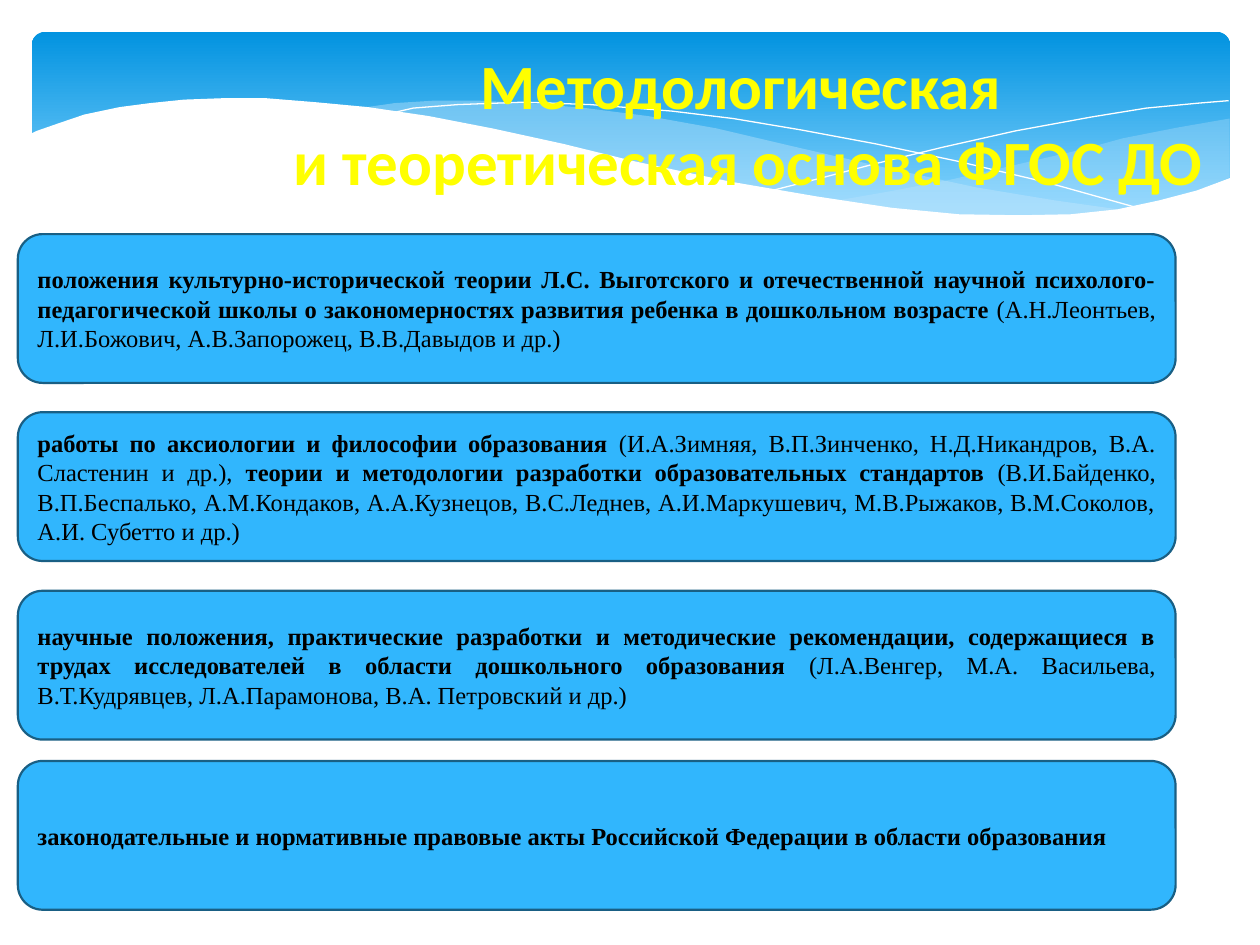
import dataclasses

import lxml.etree
import pptx
import pptx.dml.color
import pptx.enum.shapes
import pptx.enum.text
import pptx.oxml.ns
import pptx.util

Cm, Pt = pptx.util.Cm, pptx.util.Pt
RGB = pptx.dml.color.RGBColor.from_string
ROUNDED = pptx.enum.shapes.MSO_SHAPE.ROUNDED_RECTANGLE
ALIGN = pptx.enum.text.PP_ALIGN
ANCHOR = pptx.enum.text.MSO_ANCHOR


@dataclasses.dataclass(frozen=True)
class Theme:
    sky_top: str = "0293E0"
    sky_bottom: str = "83D3FE"
    swell: str = "C6E7FC"
    white: str = "FFFFFF"
    title: str = "FFFF00"
    box: str = "31B6FD"
    box_line: str = "195F84"
    text: str = "000000"
    title_font: str = "Calibri"
    text_font: str = "Times New Roman"
    title_size: int = 36
    text_size: int = 14


theme = Theme()

LEFT_SWELL = [
    (22.68, 4.24), (21.26, 4.04), (19.69, 3.78), (17.93, 3.4), (15.98, 2.95),
    (14.45, 2.59), (13.06, 2.34), (11.81, 2.18), (10.67, 2.08), (9.65, 2.03),
    (8.74, 2.03), (7.95, 2.08), (7.26, 2.18), (8.69, 2.39), (10.26, 2.69),
    (11.4, 2.95), (13.46, 3.43), (15.27, 3.81), (16.89, 4.09), (18.34, 4.27),
    (19.63, 4.37), (20.78, 4.39), (21.77, 4.34)]
RIGHT_SWELL = [
    (24.79, 2.39), (23.75, 2.57), (22.63, 2.79), (21.87, 3), (20.45, 3.33),
    (19.13, 3.63), (17.93, 3.86), (16.79, 4.06), (17.91, 4.19), (18.92, 4.29),
    (19.84, 4.37), (20.93, 4.37), (21.92, 4.32), (22.78, 4.19), (23.57, 4.01),
    (24.1, 3.86), (24.79, 3.58)]
FALLING_LINE = [
    (7.85, 2.29), (8.33, 2.18), (9.22, 2.11), (10.57, 2.06), (11.91, 2.11),
    (13.54, 2.24), (14.78, 2.39), (16.15, 2.62), (17.65, 2.9), (19.3, 3.25),
    (21.11, 3.68), (23.04, 4.22)]
RISING_LINE = [
    (15.57, 3.84), (16.59, 3.58), (17.65, 3.3), (19, 2.97), (20.47, 2.64),
    (22, 2.36), (23.11, 2.18), (24.16, 2.08), (24.77, 2.03)]
WHITE_WAVE = [
    (24.82, 3.58), (24.13, 3.84), (23.37, 4.04), (22.53, 4.22), (21.59, 4.32),
    (20.55, 4.34), (19.33, 4.32), (17.98, 4.19), (16.46, 3.96), (14.71, 3.66),
    (12.78, 3.25), (11.35, 2.9), (9.93, 2.59), (8.64, 2.34), (7.42, 2.16),
    (6.35, 2.06), (5.36, 1.98), (4.5, 1.98), (3.71, 2.01), (3.02, 2.08),
    (2.41, 2.16), (1.7, 2.31), (1.17, 2.49), (0.74, 2.64), (0.58, 2.72),
    (0.58, 5.69), (24.82, 5.69)]

# Top of each box with its text parts, which alternate bold and regular
BOXES = [
    (4.72, ["положения культурно-исторической теории Л.С. Выготского и отечественной научной "
            "психолого-педагогической школы о закономерностях развития ребенка в дошкольном возрасте ",
            "(А.Н.Леонтьев, Л.И.Божович, А.В.Запорожец, В.В.Давыдов и др.)"]),
    (8.31, ["работы по аксиологии и философии образования ",
            "(И.А.Зимняя, В.П.Зинченко, Н.Д.Никандров, В.А. Сластенин и др.),",
            " теории и методологии разработки образовательных стандартов ",
            "(В.И.Байденко, В.П.Беспалько, А.М.Кондаков, А.А.Кузнецов, B.C.Леднев, "
            "А.И.Маркушевич, М.В.Рыжаков, В.М.Соколов, А.И. Субетто и др.)"]),
    (11.91, ["научные положения, практические разработки и методические рекомендации, содержащиеся "
             "в трудах исследователей в области дошкольного образования ",
             "(Л.А.Венгер, М.А. Васильева, В.Т.Кудрявцев, Л.А.Парамонова, В.А. Петровский и др.)"]),
    (15.34, ["законодательные и нормативные правовые акты Российской Федерации в области образования"]),
]


def add_outline(s, points, closed):
    (x, y), *rest = [(Cm(x), Cm(y)) for x, y in points]
    builder = s.shapes.build_freeform(x, y)
    builder.add_line_segments(rest, close=closed)
    sp = builder.convert_to_shape()
    sp.shadow.inherit = False
    return sp


def set_font(font, name, size, color):
    font.name, font.size = name, Pt(size)
    font.color.rgb = RGB(color)


prs = pptx.Presentation()
prs.slide_width, prs.slide_height = Cm(25.4), Cm(19.05)
s = prs.slides.add_slide(prs.slide_layouts[5])

# Header band with waves
sp = s.shapes.add_shape(ROUNDED, Cm(0.64), Cm(0.64), Cm(24.16), Cm(3.96))
sp.adjustments[0] = 0.07
sp.shadow.inherit = False
sp.line.fill.background()
sp.fill.gradient()
sp.fill.gradient_angle = 270
for stop, position, color in zip(sp.fill.gradient_stops, (0, 0.9),
                                 (theme.sky_top, theme.sky_bottom)):
    stop.position = position
    stop.color.rgb = RGB(color)

waves = [(RIGHT_SWELL, theme.swell, 29), (LEFT_SWELL, theme.swell, 40),
         (FALLING_LINE, None, 100), (RISING_LINE, None, 100),
         (WHITE_WAVE, theme.white, 100)]
for points, color, opacity in waves:
    sp = add_outline(s, points, closed=color is not None)
    if color is None:
        sp.fill.background()
        sp.line.color.rgb = RGB(theme.white)
        sp.line.width = Pt(0)
        continue
    sp.line.fill.background()
    sp.fill.solid()
    sp.fill.fore_color.rgb = RGB(color)
    if opacity < 100:
        srgb = sp.element.spPr.find(".//" + pptx.oxml.ns.qn("a:srgbClr"))
        alpha = lxml.etree.SubElement(srgb, pptx.oxml.ns.qn("a:alpha"))
        alpha.set("val", str(opacity * 1000))

# Title, brought in front of the waves
title = s.shapes.title
title.element.getparent().append(title.element)
title.left, title.top, title.width, title.height = Cm(5.28), Cm(0.81), Cm(19.61), Cm(3.33)
tf = title.text_frame
tf.text = "Методологическая \nи теоретическая основа ФГОС ДО"
tf.word_wrap = False
tf.auto_size = pptx.enum.text.MSO_AUTO_SIZE.SHAPE_TO_FIT_TEXT
tf.vertical_anchor = ANCHOR.TOP
for p in tf.paragraphs:
    p.alignment = ALIGN.CENTER
    p.font.bold = True
    set_font(p.font, theme.title_font, theme.title_size, theme.title)

# Foundations
for top, parts in BOXES:
    sp = s.shapes.add_shape(ROUNDED, Cm(0.36), Cm(top), Cm(23.34), Cm(3))
    sp.shadow.inherit = False
    sp.fill.solid()
    sp.fill.fore_color.rgb = RGB(theme.box)
    sp.line.color.rgb = RGB(theme.box_line)
    sp.line.width = Pt(1.25)
    tf = sp.text_frame
    tf.word_wrap = True
    tf.vertical_anchor = ANCHOR.MIDDLE
    p = tf.paragraphs[0]
    p.alignment = ALIGN.JUSTIFY
    set_font(p.font, theme.text_font, theme.text_size, theme.text)
    for i, part in enumerate(parts):
        r = p.add_run()
        r.text = part
        r.font.bold = i % 2 == 0

prs.save("out.pptx")
